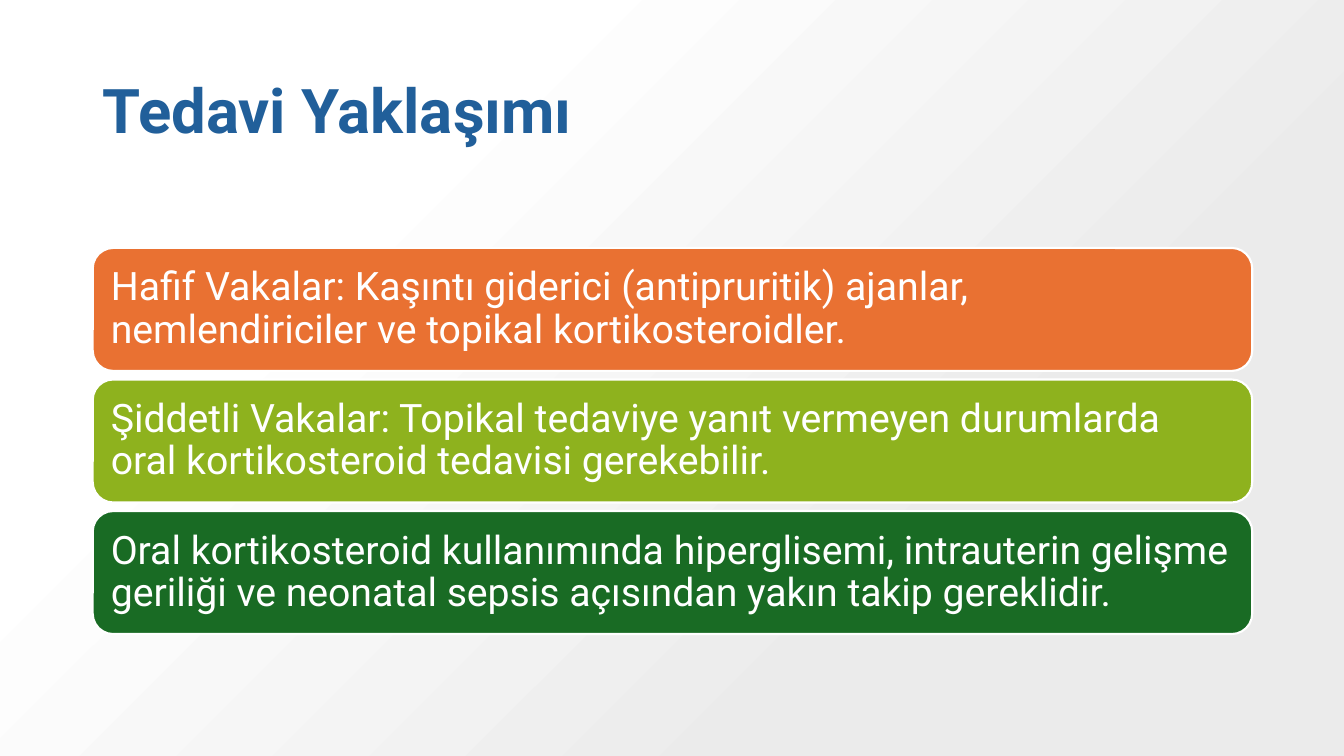
import pptx
import pptx.dml.color
import pptx.enum.shapes
import pptx.enum.text
import pptx.oxml
import pptx.oxml.ns
import pptx.util

TITLE = "Tedavi Yaklaşımı"
CARDS = [
    ("Hafif Vakalar: Kaşıntı giderici (antipruritik) ajanlar, "
     "nemlendiriciler ve topikal kortikosteroidler.", "E97132"),
    ("Şiddetli Vakalar: Topikal tedaviye yanıt vermeyen durumlarda "
     "oral kortikosteroid tedavisi gerekebilir.", "8EB21E"),
    ("Oral kortikosteroid kullanımında hiperglisemi, intrauterin gelişme "
     "geriliği ve neonatal sepsis açısından yakın takip gereklidir.", "196B24"),
]
THEME = {
    "font": "Roboto",
    "title": {"size": 44, "color": "215F9A", "bold": True},
    "card": {"size": 28, "color": "FFFFFF", "bold": False},
    "outline": "FFFFFF",
    "glow": [(0.28, "EBEBEB"), (0.74, "FFFFFF")],
}

WIDTH, HEIGHT = 13.33, 7.5
MARGIN, CONTENT_WIDTH = 0.92, 11.5
TITLE_TOP, TITLE_HEIGHT = 0.4, 1.45
CARDS_TOP, CARD_HEIGHT, CARD_PITCH = 2.46, 1.22, 1.305
CARD_INSET = 0.12

SHAPES = pptx.enum.shapes.MSO_SHAPE
inches = pptx.util.Inches


def rgb(code):
    return pptx.dml.color.RGBColor.from_string(code)


def area(left, top, width, height):
    return [inches(length) for length in (left, top, width, height)]


def write(shape, text, style, **margins):
    frame = shape.text_frame
    settings = {"word_wrap": True,
                "vertical_anchor": pptx.enum.text.MSO_ANCHOR.MIDDLE, **margins}
    for name, value in settings.items():
        setattr(frame, name, value)
    para = frame.paragraphs[0]
    para.alignment = pptx.enum.text.PP_ALIGN.LEFT
    para.line_spacing = 0.9
    span = para.add_run()
    span.text = text
    look = {"name": THEME["font"], "size": pptx.util.Pt(style["size"]),
            "bold": style["bold"]}
    for name, value in look.items():
        setattr(span.font, name, value)
    span.font.color.rgb = rgb(style["color"])


def add_backdrop(page):
    """Fill the page with a gradient that spreads from the bottom right corner."""
    backdrop = page.shapes.add_shape(SHAPES.RECTANGLE, *area(0, 0, WIDTH, HEIGHT))
    backdrop.shadow.inherit = False
    backdrop.line.fill.background()
    backdrop.fill.gradient()
    for stop, (position, color) in zip(backdrop.fill.gradient_stops, THEME["glow"]):
        stop.position = position
        stop.color.rgb = rgb(color)
    linear = next(backdrop.element.iter(pptx.oxml.ns.qn("a:lin")))
    radial = pptx.oxml.parse_xml(
        f'<a:path {pptx.oxml.ns.nsdecls("a")} path="circle">'
        '<a:fillToRect l="100000" t="100000"/></a:path>')
    linear.getparent().replace(linear, radial)


def add_card(page, row, text, color):
    top = CARDS_TOP + row * CARD_PITCH
    card = page.shapes.add_shape(
        SHAPES.ROUNDED_RECTANGLE, *area(MARGIN, top, CONTENT_WIDTH, CARD_HEIGHT))
    card.shadow.inherit = False
    card.fill.solid()
    card.fill.fore_color.rgb = rgb(color)
    card.line.color.rgb = rgb(THEME["outline"])
    card.line.width = pptx.util.Pt(1.5)
    sides = ("left", "top", "right", "bottom")
    write(card, text, THEME["card"],
          **{f"margin_{side}": inches(CARD_INSET) for side in sides})


def main():
    deck = pptx.Presentation()
    deck.slide_width, deck.slide_height = inches(WIDTH), inches(HEIGHT)
    page = deck.slides.add_slide(deck.slide_layouts[6])
    add_backdrop(page)
    title = page.shapes.add_textbox(
        *area(MARGIN, TITLE_TOP, CONTENT_WIDTH, TITLE_HEIGHT))
    write(title, TITLE, THEME["title"])
    for row, (text, color) in enumerate(CARDS):
        add_card(page, row, text, color)
    deck.save("out.pptx")


if __name__ == "__main__":
    main()
